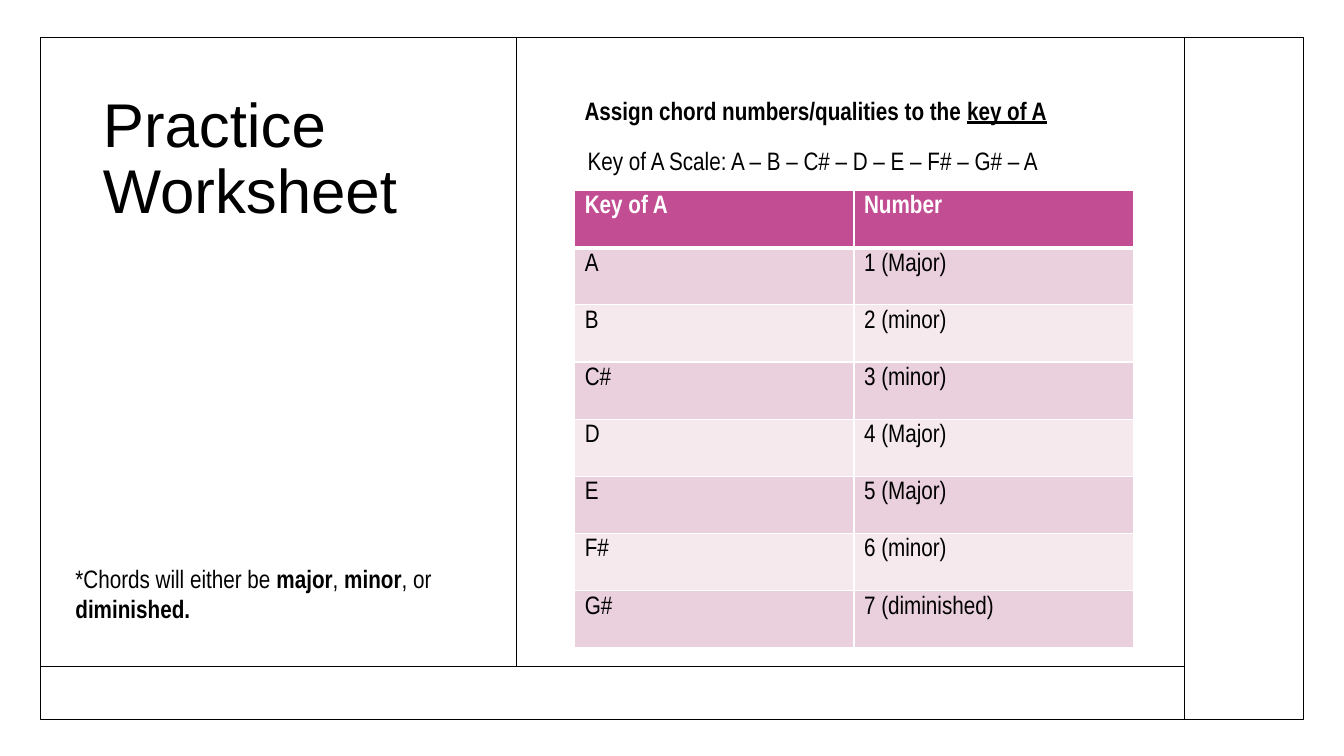
from dataclasses import dataclass

from lxml.etree import SubElement
from pptx import Presentation
from pptx.dml.color import RGBColor
from pptx.enum.shapes import MSO_CONNECTOR as Connector, MSO_SHAPE as Shape
from pptx.enum.text import MSO_ANCHOR as Anchor, MSO_AUTO_SIZE as AutoSize, PP_ALIGN as Align
from pptx.oxml.ns import qn
from pptx.util import Inches, Pt


@dataclass(frozen=True)
class Theme:
    ink: str = "000000"
    paper: str = "FFFFFF"
    header: str = "C34D92"
    bands: tuple = ("E9D0DC", "F5E9EE")
    title_font: str = "Arial"
    body_font: str = "Arial Narrow"
    title_size: float = 44.1
    body_size: float = 18
    rule_width: float = 1
    header_rule_width: float = 3


THEME = Theme()
CHORDS = [
    ("Key of A", "Number"),
    ("A", "1 (Major)"),
    ("B", "2 (minor)"),
    ("C#", "3 (minor)"),
    ("D", "4 (Major)"),
    ("E", "5 (Major)"),
    ("F#", "6 (minor)"),
    ("G#", "7 (diminished)"),
]


def rgb(value):
    return RGBColor.from_string(value)


def style_font(font, name=THEME.body_font, size=THEME.body_size, color=THEME.ink, bold=False):
    font.name, font.size, font.bold = name, Pt(size), bold
    font.color.rgb = rgb(color)


def add_rule(slide, x1, y1, x2, y2):
    rule = slide.shapes.add_connector(
        Connector.STRAIGHT, Inches(x1), Inches(y1), Inches(x2), Inches(y2))
    rule.line.color.rgb = rgb(THEME.ink)
    rule.line.width = Pt(THEME.rule_width)
    SubElement(rule.element.spPr, qn("a:effectLst"))


def add_text(slide, box, runs, wrap=False):
    """Each run is (text, bold, underline)."""
    text_box = slide.shapes.add_textbox(*map(Inches, box))
    frame = text_box.text_frame
    frame.word_wrap = wrap
    frame.auto_size = AutoSize.SHAPE_TO_FIT_TEXT
    for text, bold, underline in runs:
        run = frame.paragraphs[0].add_run()
        run.text = text
        style_font(run.font, bold=bold)
        run.font.underline = underline


def add_frame(slide, box):
    """Outer border, with a bottom strip, a right strip and a split main area."""
    left, top, width, height = box
    border = slide.shapes.add_shape(Shape.RECTANGLE, *map(Inches, box))
    border.shadow.inherit = False
    border.fill.background()
    border.line.color.rgb = rgb(THEME.ink)
    border.line.width = Pt(THEME.rule_width)

    strip_x, strip_y, split_x = left + 11.35, top + 6.24, left + 4.72
    add_rule(slide, left, strip_y, strip_x, strip_y)
    add_rule(slide, split_x, top, split_x, strip_y)
    add_rule(slide, strip_x, top, strip_x, top + height)


def add_title_panel(slide, box):
    left, top, width, height = box
    # Title
    title = slide.shapes.title
    title.left, title.top = Inches(left + 0.52), Inches(top + 0.51)
    title.width, title.height = Inches(3.75), Inches(3.11)
    frame = title.text_frame
    frame.text = "Practice\vWorksheet"
    frame.word_wrap = True
    frame.auto_size = AutoSize.NONE
    frame.vertical_anchor = Anchor.TOP
    paragraph = frame.paragraphs[0]
    paragraph.alignment = Align.LEFT
    paragraph.line_spacing = 0.9
    for run in paragraph.runs:
        style_font(run.font, THEME.title_font, THEME.title_size)

    # Hint at the foot of the panel
    add_text(slide, (left + 0.25, top + height - 1.07, 4.24, 0.71), [
        ("*Chords will either be ", False, False),
        ("major", True, False),
        (", ", False, False),
        ("minor", True, False),
        (", or ", False, False),
        ("diminished.", True, False),
    ], wrap=True)


def set_borders(cell, is_header, is_first_body):
    properties = cell._tc.get_or_add_tcPr()
    thick_side = "B" if is_header else "T" if is_first_body else None
    for position, side in enumerate("LRTB"):
        width = THEME.header_rule_width if side == thick_side else THEME.rule_width
        line = properties.makeelement(qn(f"a:ln{side}"), {"w": str(Pt(width))})
        fill = SubElement(line, qn("a:solidFill"))
        SubElement(fill, qn("a:srgbClr"), val=THEME.paper)
        properties.insert(position, line)


def add_chord_table(slide, box):
    left, top, width, height = map(Inches, box)
    table = slide.shapes.add_table(len(CHORDS), 2, left, top, width, height).table
    for row_index, row in enumerate(CHORDS):
        is_header = row_index == 0
        fill = THEME.header if is_header else THEME.bands[(row_index - 1) % 2]
        for column_index, text in enumerate(row):
            cell = table.cell(row_index, column_index)
            cell.text = text
            cell.fill.solid()
            cell.fill.fore_color.rgb = rgb(fill)
            style_font(cell.text_frame.paragraphs[0].runs[0].font,
                       color=THEME.paper if is_header else THEME.ink, bold=is_header)
            set_borders(cell, is_header, row_index == 1)


def add_exercise_panel(slide, box):
    left, top, width, height = box
    add_chord_table(slide, (left, top + 0.99, width, height - 0.99))
    # Task and scale
    add_text(slide, (left, top, 4.97, 0.4), [
        ("Assign chord numbers/qualities to the ", True, False),
        ("key of A", True, True),
    ])
    add_text(slide, (left + 0.03, top + 0.49, 5, 0.4), [
        ("Key of A Scale: A – B – C# – D – E – F# – G# – A", False, False),
    ])


def main():
    presentation = Presentation()
    presentation.slide_width, presentation.slide_height = Inches(13.33), Inches(7.5)
    slide = presentation.slides.add_slide(presentation.slide_layouts[5])
    slide.background.fill.solid()
    slide.background.fill.fore_color.rgb = rgb(THEME.paper)

    add_frame(slide, (0.4, 0.37, 12.53, 6.77))
    add_title_panel(slide, (0.4, 0.37, 4.72, 6.24))
    add_exercise_panel(slide, (5.7, 0.9, 5.54, 5.53))
    presentation.save("out.pptx")


if __name__ == "__main__":
    main()
